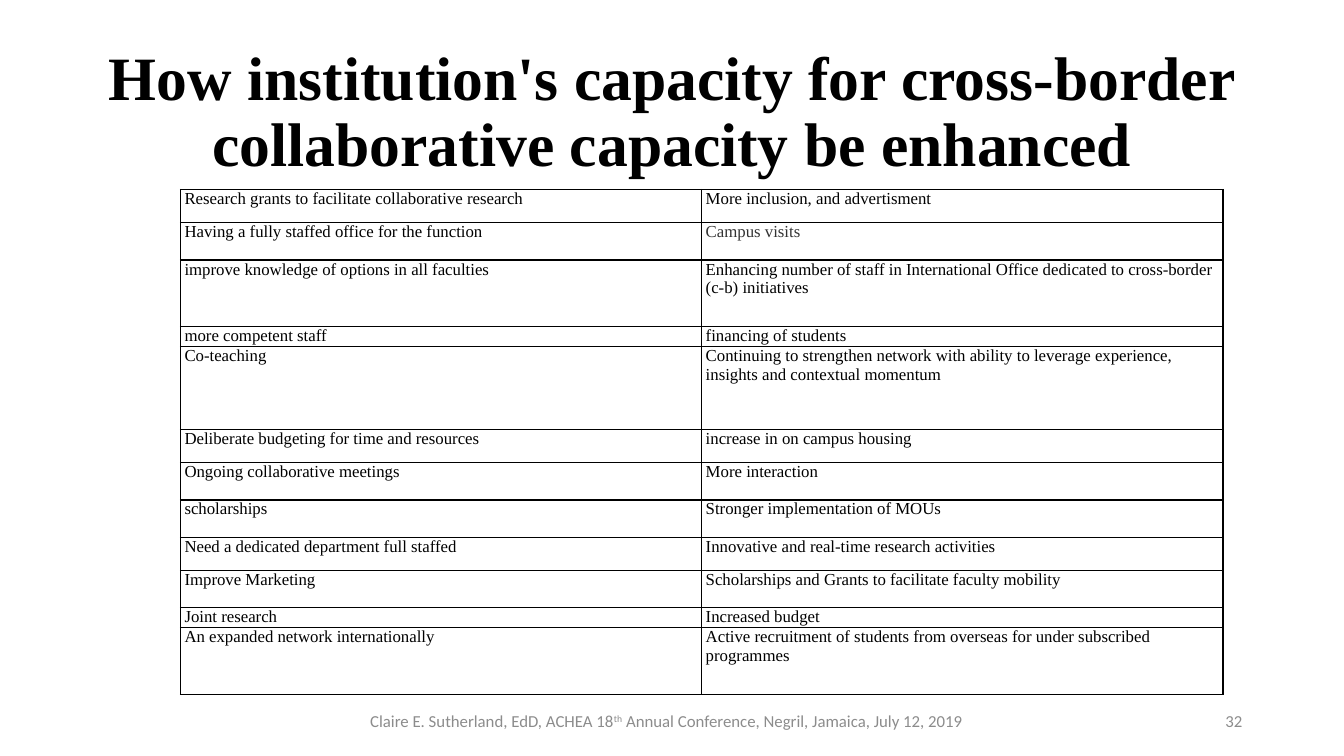
from lxml import etree
from pptx import Presentation
from pptx.dml.color import RGBColor
from pptx.enum.text import MSO_ANCHOR, PP_ALIGN
from pptx.oxml.ns import qn
from pptx.util import Inches, Pt

LEFT, CENTER, RIGHT = PP_ALIGN.LEFT, PP_ALIGN.CENTER, PP_ALIGN.RIGHT
MIDDLE = MSO_ANCHOR.MIDDLE
SLIDE_WIDTH, SLIDE_HEIGHT = Inches(13.33), Inches(7.5)
SERIF, SANS = "Times New Roman", "Calibri"
COLORS = {"text": "000000", "soft": "333333", "footer": "8C8C8C", "border": "000000"}

# Row heights in percent of the slide height
LINE, SHORT, DOUBLE, TALL, TALLEST = 2.47, 4.4, 4.93, 8.8, 10.93
ANSWERS = [
    (SHORT, "Research grants to facilitate collaborative research",
     "More inclusion, and advertisment"),
    (DOUBLE, "Having a fully staffed office for the function", "Campus visits"),
    (TALL, "improve knowledge of options in all faculties",
     "Enhancing number of staff in International Office dedicated to "
     "cross-border (c-b) initiatives"),
    (LINE, "more competent staff", "financing of students"),
    (TALLEST, "Co-teaching",
     "Continuing to strengthen network with ability to leverage experience, "
     "insights and contextual momentum"),
    (SHORT, "Deliberate budgeting for time and resources", "increase in on campus housing"),
    (DOUBLE, "Ongoing collaborative meetings", "More interaction"),
    (DOUBLE, "scholarships", "Stronger implementation of MOUs"),
    (SHORT, "Need a dedicated department full staffed",
     "Innovative and real-time research activities"),
    (DOUBLE, "Improve Marketing", "Scholarships and Grants to facilitate faculty mobility"),
    (LINE, "Joint research", "Increased budget"),
    (TALL, "An expanded network internationally",
     "Active recruitment of students from overseas for under subscribed programmes"),
]


def across(percent):
    return int(SLIDE_WIDTH * percent / 100)


def down(percent):
    return int(SLIDE_HEIGHT * percent / 100)


def write(paragraph, text, font=SERIF, size=12, color="text", bold=False,
          align=LEFT, raised=False):
    """Append one formatted run to a paragraph."""
    paragraph.alignment = align
    run = paragraph.add_run()
    run.text = text
    run.font.name = font
    run.font.size = Pt(size)
    run.font.bold = bold
    run.font.color.rgb = RGBColor.from_string(COLORS[color])
    if raised:
        run.font._element.set("baseline", "30000")


def add_text_area(slide, left, top, width, height):
    """Add a wrapped, vertically centred text box and return its paragraph."""
    shape = slide.shapes.add_textbox(across(left), down(top), across(width), down(height))
    frame = shape.text_frame
    frame.word_wrap = True
    frame.vertical_anchor = MIDDLE
    return frame.paragraphs[0]


def add_borders(cell, width=1):
    properties = cell._tc.get_or_add_tcPr()
    for position, side in enumerate(("a:lnL", "a:lnR", "a:lnT", "a:lnB")):
        line = etree.Element(qn(side), w=str(Pt(width)))
        fill = etree.SubElement(line, qn("a:solidFill"))
        etree.SubElement(fill, qn("a:srgbClr"), val=COLORS["border"])
        properties.insert(position, line)


def fill_cell(cell, text):
    cell.margin_left = cell.margin_right = Inches(0.04)
    cell.margin_top = cell.margin_bottom = 0
    cell.fill.background()
    add_borders(cell)
    color = "soft" if text == "Campus visits" else "text"
    write(cell.text_frame.paragraphs[0], text, color=color)


def add_answer_table(slide, left, top, width):
    height = sum(answer[0] for answer in ANSWERS)
    frame = slide.shapes.add_table(len(ANSWERS), 2, across(left), down(top),
                                   across(width), down(height))
    table = frame.table
    table.first_row = table.horz_banding = False
    for row, (row_height, *texts) in zip(table.rows, ANSWERS):
        row.height = down(row_height)
        for cell, text in zip(row.cells, texts):
            fill_cell(cell, text)


def main():
    presentation = Presentation()
    presentation.slide_width, presentation.slide_height = SLIDE_WIDTH, SLIDE_HEIGHT
    slide = presentation.slides.add_slide(presentation.slide_layouts[6])

    # Title
    title = add_text_area(slide, 6.9, 5.33, 86.27, 19.33)
    title.line_spacing = 0.9
    write(title, "How institution's capacity for cross-border collaborative capacity be enhanced",
          size=44, bold=True, align=CENTER)

    # Survey answers
    add_answer_table(slide, 13.43, 25.07, 77.57)

    # Footer and slide number
    small = {"font": SANS, "color": "footer"}
    footer = add_text_area(slide, 11.03, 92.67, 77.12, 5.33)
    write(footer, "Claire E. Sutherland, EdD, ACHEA 18", align=CENTER, **small)
    write(footer, "th", align=CENTER, raised=True, **small)
    write(footer, " Annual Conference, Negril, Jamaica, July 12, 2019", align=CENTER, **small)
    number = add_text_area(slide, 70.67, 92.67, 22.5, 5.33)
    write(number, "32", align=RIGHT, **small)

    presentation.save("out.pptx")


if __name__ == "__main__":
    main()
